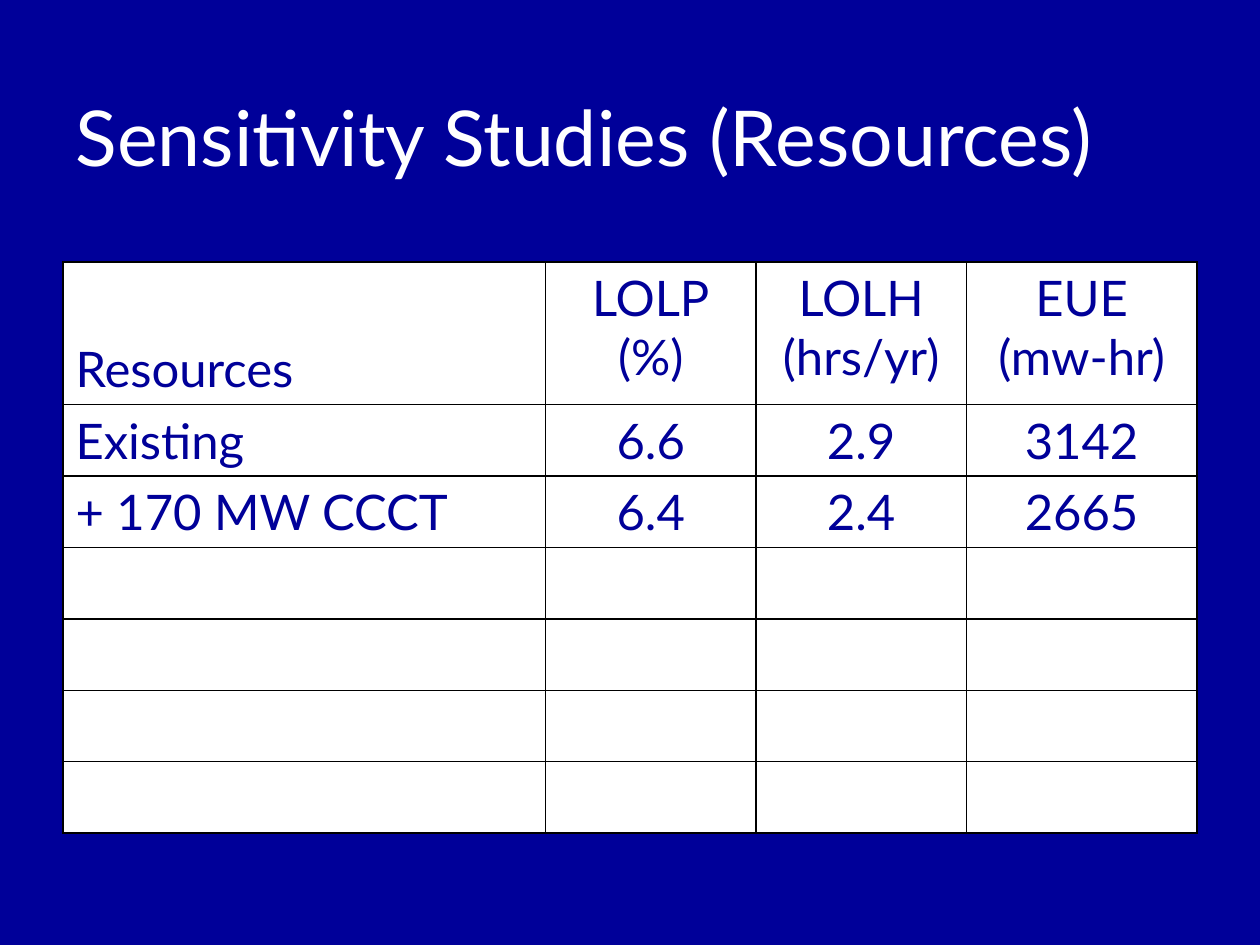
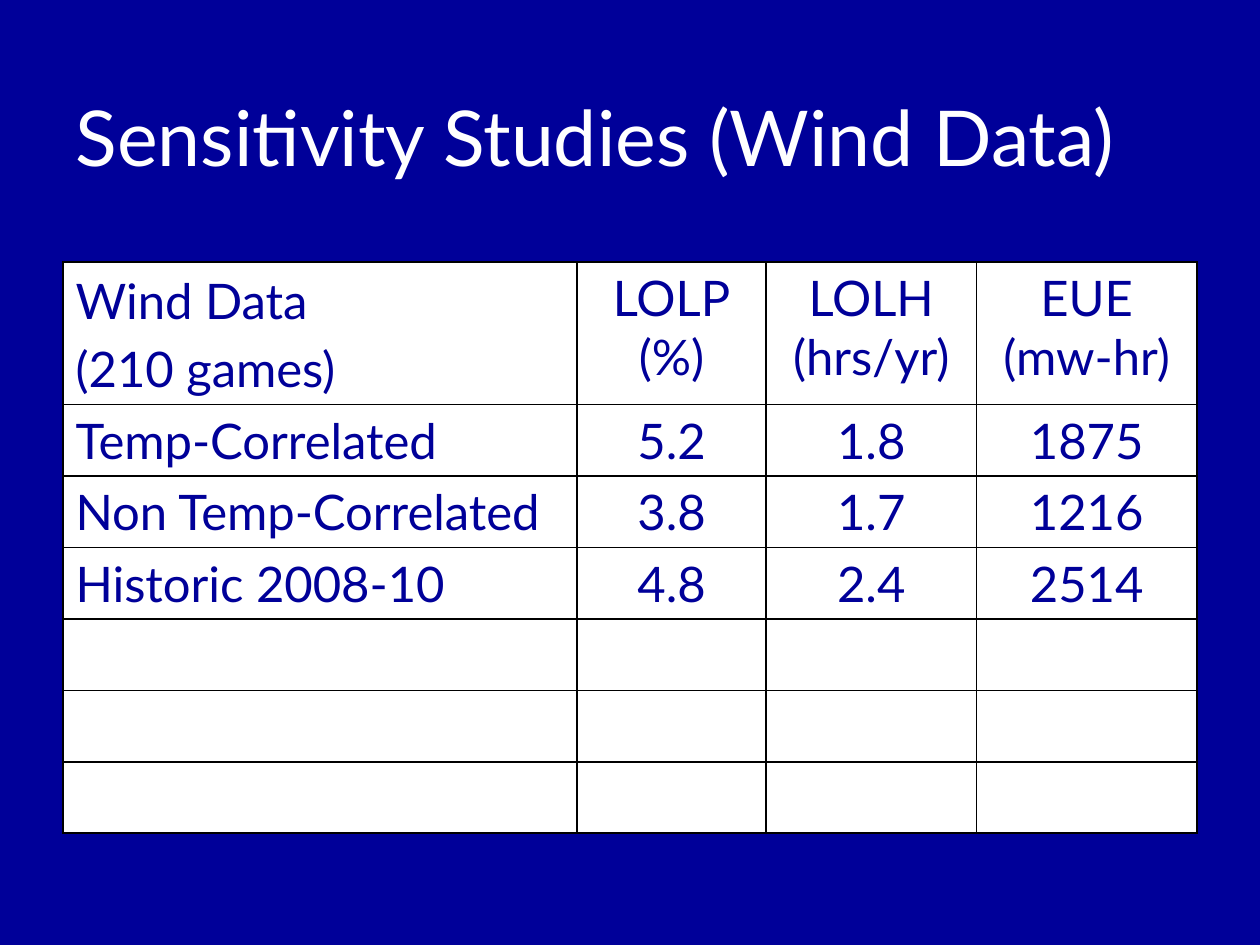
from dataclasses import dataclass

from lxml import etree
from pptx import Presentation
from pptx.dml.color import RGBColor
from pptx.enum.text import MSO_ANCHOR, PP_ALIGN
from pptx.oxml.ns import qn
from pptx.util import Inches, Pt

LEFT, CENTER = PP_ALIGN.LEFT, PP_ALIGN.CENTER
TOP, MIDDLE, BOTTOM = MSO_ANCHOR.TOP, MSO_ANCHOR.MIDDLE, MSO_ANCHOR.BOTTOM
TITLE_ONLY = 5


@dataclass(frozen=True)
class Theme:
    font: str = "Lato"
    navy: str = "000099"
    white: str = "FFFFFF"
    rule: str = "000000"
    rule_width: float = 1
    title_size: float = 44
    table_size: float = 28
    para_gap: float = 5.6


THEME = Theme()
WIDTH, HEIGHT = Inches(10), Inches(7.5)
TITLE_BOX = (Inches(0.5), Inches(0.32), Inches(9), Inches(1.51))
TABLE_BOX = (Inches(0.5), Inches(2.08), Inches(9), Inches(4.53))
ROW_COUNT = 7
HEADER_SHARE = 0.25
MEASURES = ["LOLP\v(%)", "LOLH\v(hrs/yr)", "EUE\v(mw-hr)"]

STUDIES = [
    {
        "title": "Sensitivity Studies (Resources)",
        "columns": (3.83, 1.67, 1.67, 1.83),
        "rows": [
            ["Resources", *MEASURES],
            ["Existing", "6.6", "2.9", "3142"],
            ["+ 170 MW CCCT", "6.4", "2.4", "2665"],
        ],
    },
    {
        "title": "Sensitivity Studies (Wind Data)",
        "columns": (4.08, 1.5, 1.67, 1.75),
        "rows": [
            ["Wind Data\n(210 games)", *MEASURES],
            ["Temp-Correlated", "5.2", "1.8", "1875"],
            ["Non Temp-Correlated", "3.8", "1.7", "1216"],
            ["Historic 2008-10", "4.8", "2.4", "2514"],
        ],
    },
]


def write_text(frame, text, *, size, color, align=LEFT, gap=0):
    """Fill a text frame; \\n starts a paragraph and \\v breaks a line."""
    frame.text = text
    for index, para in enumerate(frame.paragraphs):
        para.alignment = align
        para.space_before = Pt(gap if index else 0)
        for span in para.runs:
            span.font.name = THEME.font
            span.font.size = Pt(size)
            span.font.color.rgb = RGBColor.from_string(color)


def add_title(page, text, box):
    title = page.shapes.title
    title.left, title.top, title.width, title.height = box
    title.text_frame.vertical_anchor = MIDDLE
    write_text(title.text_frame, text, size=THEME.title_size, color=THEME.white)


def style_cell(cell):
    """Rule all four sides, then fill the cell white."""
    properties = cell._tc.get_or_add_tcPr()
    for side in ("lnL", "lnR", "lnT", "lnB"):
        line = etree.SubElement(properties, qn(f"a:{side}"), w=str(Pt(THEME.rule_width)))
        fill = etree.SubElement(line, qn("a:solidFill"))
        etree.SubElement(fill, qn("a:srgbClr"), val=THEME.rule)
    cell.fill.solid()
    cell.fill.fore_color.rgb = RGBColor.from_string(THEME.white)


def add_study_table(page, rows, columns, box):
    """Place the results under a tall header; unused rows stay empty."""
    width, height = box[2:]
    table = page.shapes.add_table(ROW_COUNT, len(columns), *box).table
    table.first_row = table.horz_banding = False
    for column, share in zip(table.columns, columns):
        column.width = int(width * share / sum(columns))
    header_height = int(height * HEADER_SHARE)
    for index, row in enumerate(table.rows):
        row.height = (height - header_height) // (ROW_COUNT - 1) if index else header_height
    for cell in table.iter_cells():
        style_cell(cell)
    for row_index, values in enumerate(rows):
        for column_index, value in enumerate(values):
            cell = table.cell(row_index, column_index)
            is_corner = row_index == column_index == 0
            cell.vertical_anchor = BOTTOM if is_corner else TOP
            write_text(cell.text_frame, value, size=THEME.table_size, color=THEME.navy,
                       align=CENTER if column_index else LEFT, gap=THEME.para_gap)


def add_study_slide(deck, study):
    page = deck.slides.add_slide(deck.slide_layouts[TITLE_ONLY])
    add_title(page, study["title"], TITLE_BOX)
    add_study_table(page, study["rows"], study["columns"], TABLE_BOX)


def main():
    deck = Presentation()
    deck.slide_width, deck.slide_height = WIDTH, HEIGHT
    background = deck.slide_master.background.fill
    background.solid()
    background.fore_color.rgb = RGBColor.from_string(THEME.navy)
    for study in STUDIES:
        add_study_slide(deck, study)
    deck.save("out.pptx")


if __name__ == "__main__":
    main()
